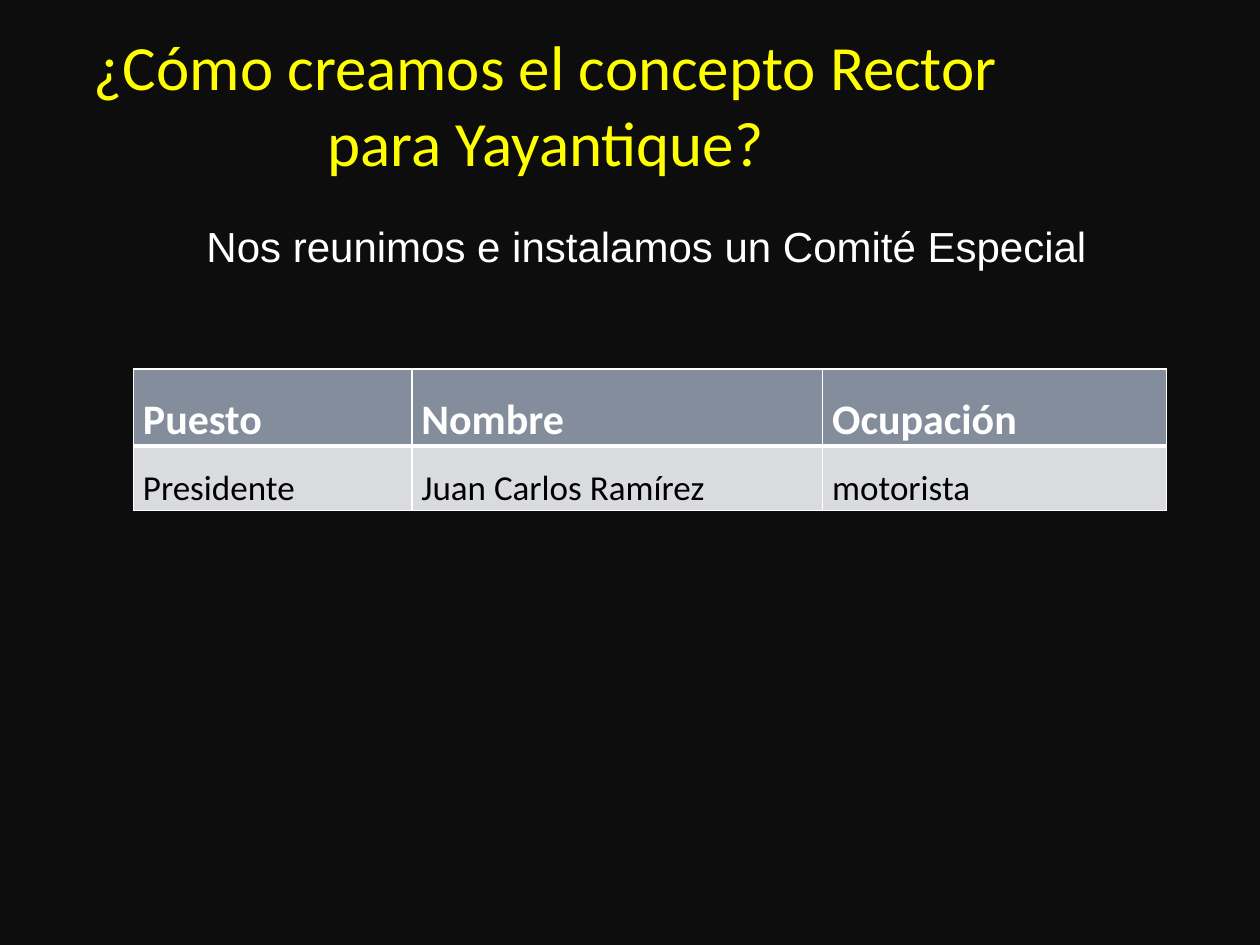
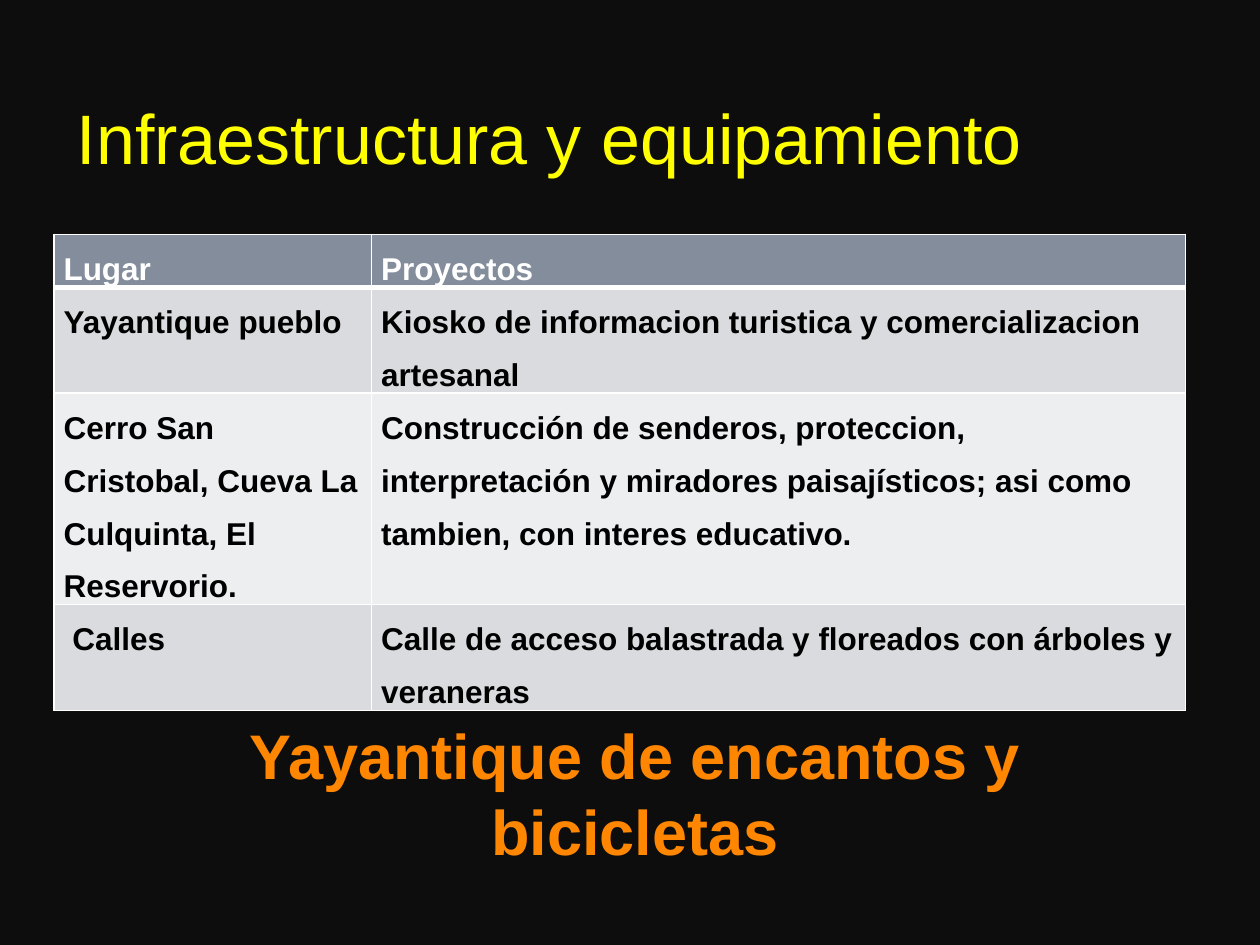
import dataclasses
import typing

import lxml.etree
import pptx
import pptx.dml.color
import pptx.enum.text
import pptx.oxml.ns
import pptx.util

COLUMNS, ROWS = 100, 75
NIGHT, YELLOW, ORANGE = "0D0D0D", "FFFF00", "FF8600"
WHITE, BLACK = "FFFFFF", "000000"
HEADER_FILL, BAND_FILLS = "838D9B", ("D9DBDE", "EDEEEF")
ROW_HEIGHT = 4.1
THIN, THICK = 1, 3
ALIGN = pptx.enum.text.PP_ALIGN
ANCHOR = pptx.enum.text.MSO_ANCHOR

presentation = pptx.Presentation()
presentation.slide_width = pptx.util.Inches(10)
presentation.slide_height = pptx.util.Inches(7.5)


@dataclasses.dataclass(frozen=True)
class Frame:
    column: float
    row: float
    columns: float
    rows: float

    def lengths(self) -> tuple[int, int, int, int]:
        return across(self.column), down(self.row), across(self.columns), down(self.rows)


@dataclasses.dataclass(frozen=True)
class Style:
    font: str
    size: float
    color: str
    bold: bool = False
    align: ALIGN = ALIGN.LEFT


@dataclasses.dataclass(frozen=True)
class Grid:
    column: float
    row: float
    widths: tuple[float, ...]
    header: Style
    body: Style
    rows: tuple[tuple[str, ...], ...]


def across(columns: float) -> int:
    return round(presentation.slide_width * columns / COLUMNS)


def down(rows: float) -> int:
    return round(presentation.slide_height * rows / ROWS)


def rgb(color: str) -> pptx.dml.color.RGBColor:
    return pptx.dml.color.RGBColor.from_string(color)


def write(text_frame: typing.Any, words: str, style: Style) -> typing.Any:
    paragraph = text_frame.paragraphs[0]
    paragraph.alignment = style.align
    run = paragraph.add_run()
    run.text = words
    run.font.name = style.font
    run.font.size = pptx.util.Pt(style.size)
    run.font.bold = style.bold
    run.font.color.rgb = rgb(style.color)
    return paragraph


def add_titled_slide(words: str, style: Style, columns: float) -> typing.Any:
    slide = presentation.slides.add_slide(presentation.slide_layouts[5])
    title = slide.shapes.title
    title.left, title.top, title.width, title.height = Frame(5.1, 2.1, columns, 12.6).lengths()
    title.text_frame.auto_size = pptx.enum.text.MSO_AUTO_SIZE.NONE
    title.text_frame.vertical_anchor = ANCHOR.BOTTOM
    write(title.text_frame, words, style)
    return slide


def add_text(slide: typing.Any, words: str, frame: Frame, style: Style) -> None:
    text_frame = slide.shapes.add_textbox(*frame.lengths()).text_frame
    text_frame.word_wrap = True
    write(text_frame, words, style)


def border_cell(cell: typing.Any, top: float, bottom: float) -> None:
    properties = cell._tc.get_or_add_tcPr()
    edges = (("a:lnL", THIN), ("a:lnR", THIN), ("a:lnT", top), ("a:lnB", bottom))
    for position, (tag, width) in enumerate(edges):
        line = lxml.etree.Element(pptx.oxml.ns.qn(tag), w=str(pptx.util.Pt(width)))
        fill = lxml.etree.SubElement(line, pptx.oxml.ns.qn("a:solidFill"))
        lxml.etree.SubElement(fill, pptx.oxml.ns.qn("a:srgbClr"), val=WHITE)
        properties.insert(position, line)


def add_grid(slide: typing.Any, grid: Grid) -> None:
    frame = Frame(grid.column, grid.row, sum(grid.widths), ROW_HEIGHT * len(grid.rows))
    table = slide.shapes.add_table(len(grid.rows), len(grid.widths), *frame.lengths()).table
    for column, width in zip(table.columns, grid.widths):
        column.width = across(width)
    for level, entries in enumerate(grid.rows):
        is_header = level == 0
        for place, words in enumerate(entries):
            cell = table.cell(level, place)
            cell.margin_left = cell.margin_right = across(0.75)
            cell.margin_top = cell.margin_bottom = 0
            cell.fill.solid()
            cell.fill.fore_color.rgb = rgb(HEADER_FILL if is_header else BAND_FILLS[(level - 1) % 2])
            border_cell(cell, THICK if level == 1 else THIN, THICK if is_header else THIN)
            paragraph = write(cell.text_frame, words, grid.header if is_header else grid.body)
            paragraph.line_spacing = 1.5
            paragraph.space_after = pptx.util.Pt(6)


COMMITTEE = Grid(
    10.6, 29.3, (22.1, 32.6, 27.3),
    Style("Calibri", 24, WHITE, bold=True),
    Style("Calibri", 20, BLACK),
    (
        ("Puesto", "Nombre", "Ocupación"),
        ("Presidente", "Juan Carlos Ramírez", "motorista"),
    ),
)

PROJECTS = Grid(
    4.3, 18.6, (25.2, 64.6),
    Style("Arial", 18, WHITE, bold=True),
    Style("Arial", 18, BLACK, bold=True),
    (
        ("Lugar", "Proyectos"),
        ("Yayantique pueblo", "Kiosko de informacion turistica y comercializacion artesanal"),
        (
            "Cerro San Cristobal, Cueva La Culquinta, El Reservorio.",
            "Construcción de senderos, proteccion, interpretación y miradores paisajísticos; "
            "asi como tambien, con interes educativo.",
        ),
        (" Calles", "Calle de acceso balastrada y floreados con árboles y veraneras"),
    ),
)


def main() -> None:
    background = presentation.slide_master.background.fill
    background.solid()
    background.fore_color.rgb = rgb(NIGHT)

    committee = add_titled_slide(
        "¿Cómo creamos el concepto Rector para Yayantique?",
        Style("Calibri", 36, YELLOW, align=ALIGN.CENTER),
        76.4,
    )
    add_grid(committee, COMMITTEE)
    add_text(
        committee,
        "Nos reunimos e instalamos un Comité Especial",
        Frame(15.4, 17, 73.5, 5),
        Style("Arial", 24, WHITE),
    )

    projects = add_titled_slide("Infraestructura y equipamiento", Style("Arial", 40, YELLOW), 81.1)
    add_grid(projects, PROJECTS)
    add_text(
        projects,
        "Yayantique de encantos y bicicletas",
        Frame(12.5, 56.4, 75.8, 12.5),
        Style("Arial", 36, ORANGE, bold=True, align=ALIGN.CENTER),
    )
    presentation.save("out.pptx")


if __name__ == "__main__":
    main()
